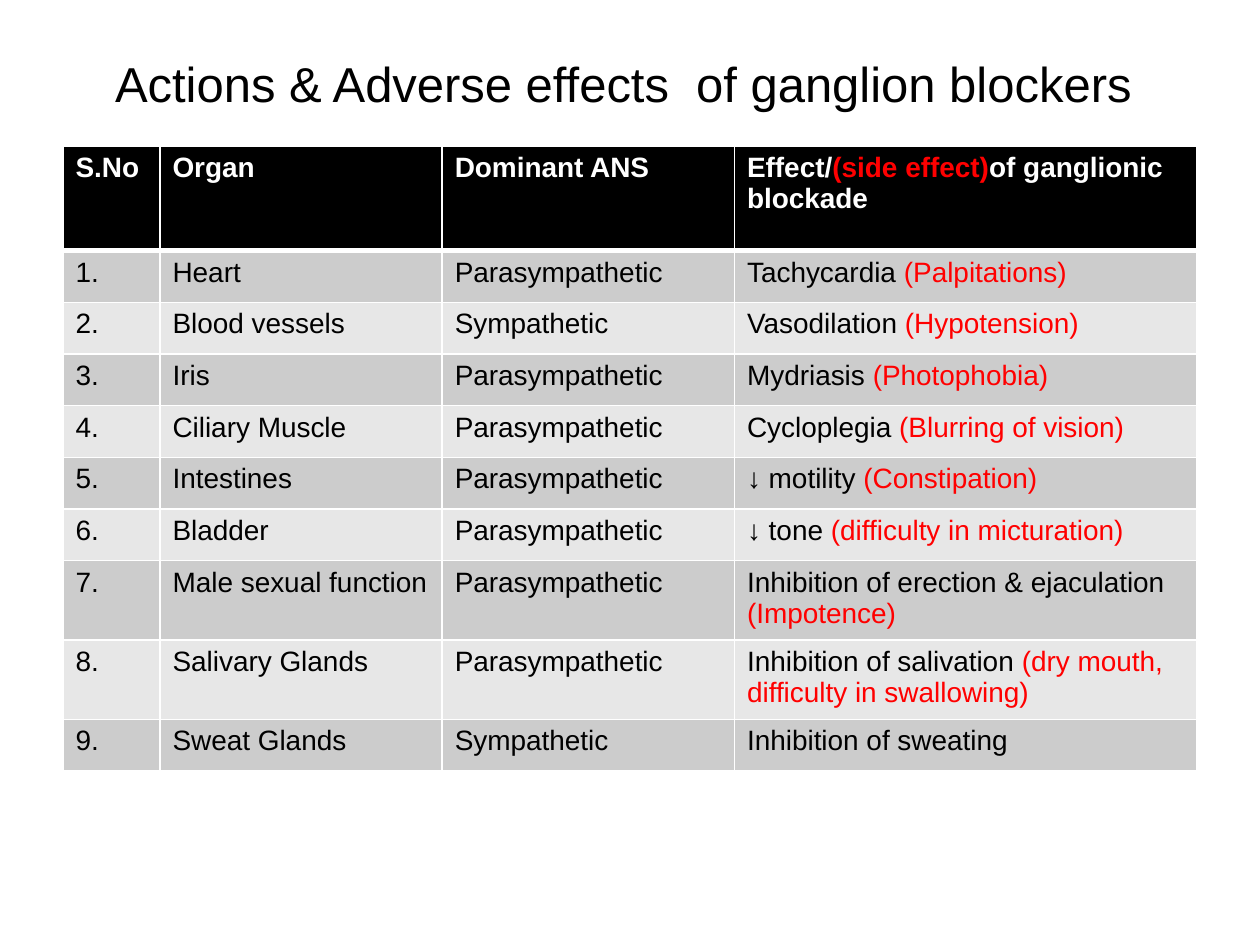
from lxml.etree import SubElement
from pptx import Presentation
from pptx.dml.color import RGBColor
from pptx.enum.text import MSO_ANCHOR, PP_ALIGN
from pptx.oxml.ns import qn
from pptx.util import Inches, Pt

COLORS = {"black": "000000", "white": "FFFFFF", "red": "FF0000",
          "dark": "CCCCCC", "light": "E7E7E7"}
WIDTHS = [0.77, 2.24, 2.32, 3.67]
HEIGHTS = [0.83] + [0.41] * 6 + [0.63] * 2 + [0.41]
PARA, SYMP = "Parasympathetic", "Sympathetic"

# The last column alternates plain text and side effect.
HEAD = ["S.No", "Organ", "Dominant ANS",
        ("Effect/", "(side effect)", "of ganglionic blockade")]
ORGANS = [
    ("Heart", PARA, ("Tachycardia ", "(Palpitations)")),
    ("Blood vessels", SYMP, ("Vasodilation ", "(Hypotension)")),
    ("Iris", PARA, ("Mydriasis ", "(Photophobia)")),
    ("Ciliary Muscle", PARA, ("Cycloplegia ", "(Blurring of vision)")),
    ("Intestines", PARA, ("↓ motility ", "(Constipation)")),
    ("Bladder", PARA, ("↓ tone ", "(difficulty in micturation)")),
    ("Male sexual function", PARA,
     ("Inhibition of erection & ejaculation ", "(Impotence)")),
    ("Salivary Glands", PARA,
     ("Inhibition of salivation ", "(dry mouth, difficulty in swallowing)")),
    ("Sweat Glands", SYMP, "Inhibition of sweating"),
]


def rgb(name):
    return RGBColor.from_string(COLORS[name])


def write(frame, text, size=16, color="black", bold=False, align=PP_ALIGN.LEFT):
    """Write a string, or a tuple whose every second part is red."""
    parts = (text,) if isinstance(text, str) else text
    para = frame.paragraphs[0]
    para.alignment = align
    for i, part in enumerate(parts):
        run = para.add_run()
        run.text = part
        font = run.font
        font.name, font.size, font.bold = "Arial", Pt(size), bold
        font.color.rgb = rgb("red" if i % 2 else color)


def edge(cell, side, width):
    line = SubElement(cell._tc.get_or_add_tcPr(), qn(f"a:ln{side}"),
                      w=str(Pt(width)))
    fill = SubElement(line, qn("a:solidFill"))
    SubElement(fill, qn("a:srgbClr"), val=COLORS["white"])


def add_title(slide, text):
    title = slide.shapes.title
    title.left, title.top = Inches(0.5), Inches(0.18)
    title.width, title.height = Inches(9), Inches(0.96)
    frame = title.text_frame
    frame.word_wrap = True
    frame.vertical_anchor = MSO_ANCHOR.MIDDLE
    write(frame, text, size=28, align=PP_ALIGN.CENTER)


def fill_cell(cell, text, row):
    head = row == 0
    thick = {"T": 3 if row == 1 else 1, "B": 3 if head else 1}
    for side in "LRTB":
        edge(cell, side, thick.get(side, 1))
    cell.fill.solid()
    shade = "black" if head else ("dark" if row % 2 else "light")
    cell.fill.fore_color.rgb = rgb(shade)
    write(cell.text_frame, text, color="white" if head else "black", bold=head)


def add_grid(slide, rows):
    table = slide.shapes.add_table(
        len(rows), len(WIDTHS), Inches(0.5), Inches(1.16),
        Inches(sum(WIDTHS)), Inches(sum(HEIGHTS))).table
    for col, width in zip(table.columns, WIDTHS):
        col.width = Inches(width)
    for r, (row, height) in enumerate(zip(rows, HEIGHTS)):
        table.rows[r].height = Inches(height)
        for c, text in enumerate(row):
            fill_cell(table.cell(r, c), text, r)


def main():
    deck = Presentation()
    deck.slide_width, deck.slide_height = Inches(10), Inches(7.5)
    slide = deck.slides.add_slide(deck.slide_layouts[5])
    add_title(slide, "Actions & Adverse effects  of ganglion blockers ")
    body = [(f"{n}.", *organ) for n, organ in enumerate(ORGANS, 1)]
    add_grid(slide, [HEAD] + body)
    deck.save("out.pptx")


if __name__ == "__main__":
    main()
